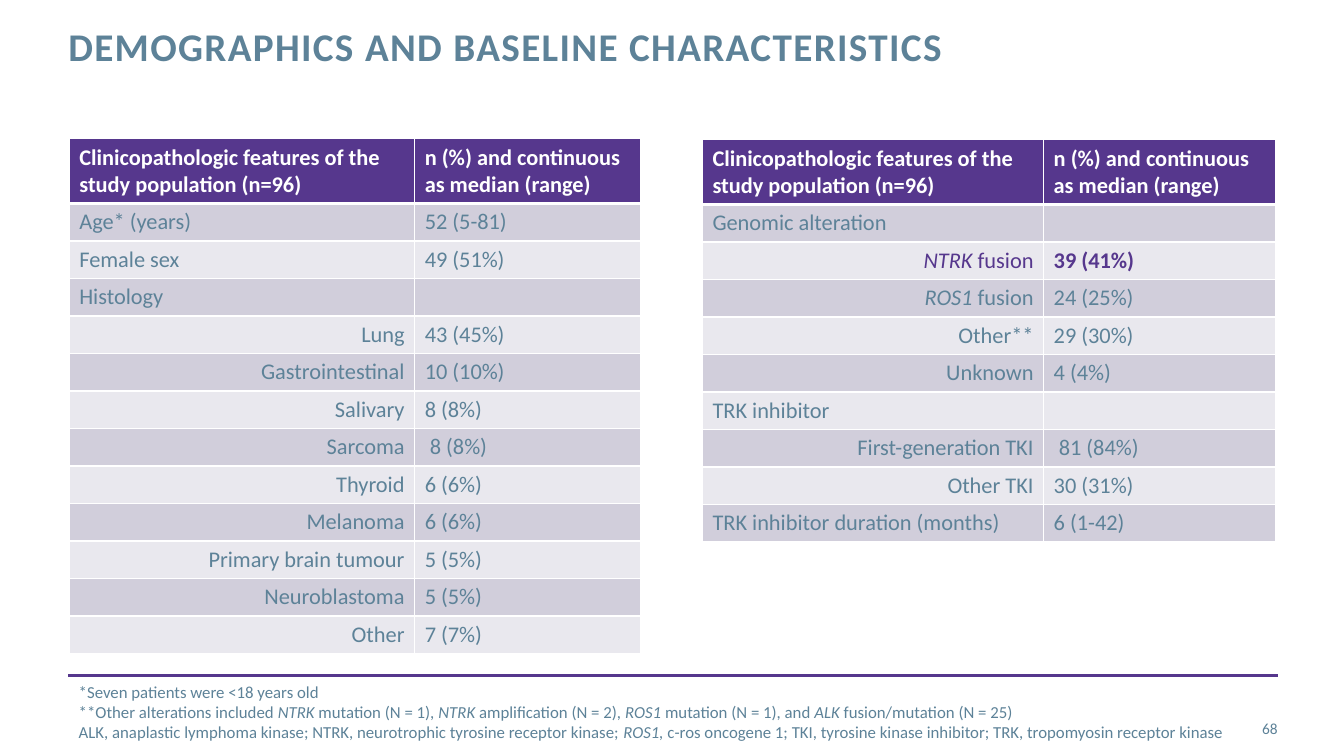
from dataclasses import dataclass

from lxml import etree
from pptx import Presentation
from pptx import util as u
from pptx.dml.color import RGBColor
from pptx.enum import shapes, text
from pptx.oxml import ns

PX = 9525
RIGHT = text.PP_ALIGN.RIGHT
LEFT = text.PP_ALIGN.LEFT
MIDDLE = text.MSO_ANCHOR.MIDDLE
TOP = text.MSO_ANCHOR.TOP


@dataclass(frozen=True)
class Theme:
    font: str = "Calibri"
    slate: str = "5D8298"
    purple: str = "56378D"
    white: str = "FFFFFF"
    bands: tuple = ("D1CEDB", "E9E8EE")
    title_size: int = 28
    table_size: int = 16
    note_size: int = 12
    number_size: int = 11


TITLE = "DEMOGRAPHICS AND BASELINE CHARACTERISTICS"
HEADER = ("Clinicopathologic features of the study population (n=96)",
          "n (%) and continuous as median (range)")
PATIENTS = [
    ("Age* (years)", "52 (5-81)"),
    ("Female sex", "49 (51%)"),
    ("Histology", ""),
    (">Lung", "43 (45%)"),
    (">Gastrointestinal", "10 (10%)"),
    (">Salivary", "8 (8%)"),
    (">Sarcoma", " 8 (8%)"),
    (">Thyroid", "6 (6%)"),
    (">Melanoma", "6 (6%)"),
    (">Primary brain tumour", "5 (5%)"),
    (">Neuroblastoma", "5 (5%)"),
    (">Other", "7 (7%)"),
]
TREATMENT = [
    ("Genomic alteration", ""),
    (">_NTRK_ fusion", "39 (41%)"),
    (">_ROS1_ fusion", "24 (25%)"),
    (">Other**", "29 (30%)"),
    (">Unknown", "4 (4%)"),
    ("TRK inhibitor", ""),
    (">First-generation TKI", " 81 (84%)"),
    (">Other TKI", "30 (31%)"),
    ("TRK inhibitor duration (months)", "6 (1-42)"),
]
HIGHLIGHT = ">_NTRK_ fusion"
NOTES = [
    "*Seven patients were <18 years old",
    "**Other alterations included _NTRK_ mutation (N = 1), _NTRK_ amplification (N = 2), "
    "_ROS1_ mutation (N = 1), and _ALK_ fusion/mutation (N = 25)",
    "ALK, anaplastic lymphoma kinase; NTRK, neurotrophic tyrosine receptor kinase; "
    "_ROS1,_ c-ros oncogene 1; TKI, tyrosine kinase inhibitor; TRK, tropomyosin receptor kinase",
]


class SlideBuilder:
    """Draw styled elements on the current slide, with lengths in px."""

    def __init__(self, presentation, theme):
        self.theme = theme
        self.slide = presentation.slides.add_slide(presentation.slide_layouts[1])

    def apply(self, target, values):
        for name, value in values.items():
            setattr(target, name, value)

    def place(self, shape, box, anchor):
        self.apply(shape, {name: value * PX for name, value in
                           zip(("left", "top", "width", "height"), box)})
        self.apply(shape.text_frame, {
            "word_wrap": True, "auto_size": text.MSO_AUTO_SIZE.NONE,
            "vertical_anchor": anchor, "margin_left": 0, "margin_right": 0,
            "margin_top": 0, "margin_bottom": 0})

    def fill_text(self, paragraph, content, size, color, bold=False, align=LEFT):
        paragraph.alignment = align
        if not content:
            etree.SubElement(paragraph._p, ns.qn("a:endParaRPr"), sz=str(size * 100))
        for index, part in enumerate(content.split("_")):
            if part:
                run = paragraph.add_run()
                run.text = part
                self.apply(run.font, {"name": self.theme.font, "size": u.Pt(size),
                                      "bold": bold, "italic": index % 2 == 1})
                run.font.color.rgb = RGBColor.from_string(color)

    def title(self, content, box):
        shape = self.slide.shapes.title
        self.place(shape, box, TOP)
        paragraph = shape.text_frame.paragraphs[0]
        paragraph.line_spacing = u.Pt(30)
        self.fill_text(paragraph, content, self.theme.title_size, self.theme.slate, bold=True)
        paragraph.runs[0]._r.get_or_add_rPr().set("spc", "100")

    def notes(self, lines, box):
        shape = self.slide.placeholders[1]
        self.place(shape, box, MIDDLE)
        frame = shape.text_frame
        for index, line in enumerate(lines):
            paragraph = frame.add_paragraph() if index else frame.paragraphs[0]
            properties = paragraph._p.get_or_add_pPr()
            self.apply(paragraph, {"space_before": u.Pt(0), "space_after": u.Pt(0)})
            for name in ("marL", "indent"):
                properties.set(name, "0")
            etree.SubElement(properties, ns.qn("a:buNone"))
            self.fill_text(paragraph, line, self.theme.note_size, self.theme.slate)

    def number(self, content, box):
        shape = self.slide.shapes.add_textbox(0, 0, PX, PX)
        self.place(shape, box, MIDDLE)
        self.fill_text(shape.text_frame.paragraphs[0], content, self.theme.number_size,
                       self.theme.slate, align=RIGHT)

    def rule(self, left, right, top):
        line = self.slide.shapes.add_connector(
            shapes.MSO_CONNECTOR.STRAIGHT, left * PX, top * PX, right * PX, top * PX)
        line.line.color.rgb = RGBColor.from_string(self.theme.purple)
        line.line.width = u.Pt(2)
        etree.SubElement(line._element.spPr, ns.qn("a:effectLst"))

    def borders(self, cell, row):
        properties = cell._tc.get_or_add_tcPr()
        widths = {"L": 1, "R": 1, "T": 3 if row == 1 else 1, "B": 3 if row == 0 else 1}
        for side, width in widths.items():
            line = etree.SubElement(properties, ns.qn(f"a:ln{side}"), w=str(u.Pt(width)))
            fill = etree.SubElement(line, ns.qn("a:solidFill"))
            etree.SubElement(fill, ns.qn("a:srgbClr"), val=self.theme.white)

    def table(self, rows, left, top, widths):
        theme = self.theme
        heights = [57] + [33] * len(rows)
        frame = self.slide.shapes.add_table(
            len(heights), 2, left * PX, top * PX, sum(widths) * PX, sum(heights) * PX)
        table = frame.table
        for column, width in zip(table.columns, widths):
            column.width = width * PX
        for row, (values, height) in enumerate(zip([HEADER] + rows, heights)):
            table.rows[row].height = height * PX
            highlighted = values[0] == HIGHLIGHT
            color = theme.purple if highlighted else theme.slate if row else theme.white
            fill = theme.bands[(row - 1) % 2] if row else theme.purple
            for index, value in enumerate(values):
                cell = table.cell(row, index)
                cell.vertical_anchor = MIDDLE
                self.borders(cell, row)
                cell.fill.solid()
                cell.fill.fore_color.rgb = RGBColor.from_string(fill)
                self.fill_text(cell.text_frame.paragraphs[0], value.lstrip(">"),
                               theme.table_size, color,
                               bold=row == 0 or (highlighted and index == 1),
                               align=RIGHT if value.startswith(">") else LEFT)


def main():
    presentation = Presentation()
    presentation.slide_width = 1280 * PX
    presentation.slide_height = 720 * PX
    builder = SlideBuilder(presentation, Theme())
    builder.rule(65, 1217, 643)
    builder.title(TITLE, (65, 26, 918, 84))
    builder.number("68", (1134, 675, 83, 38))
    builder.notes(NOTES, (75, 636, 1116, 84))
    builder.table(PATIENTS, 66, 132, (329, 215))
    builder.table(TREATMENT, 669, 133, (325, 221))
    presentation.save("out.pptx")


if __name__ == "__main__":
    main()
